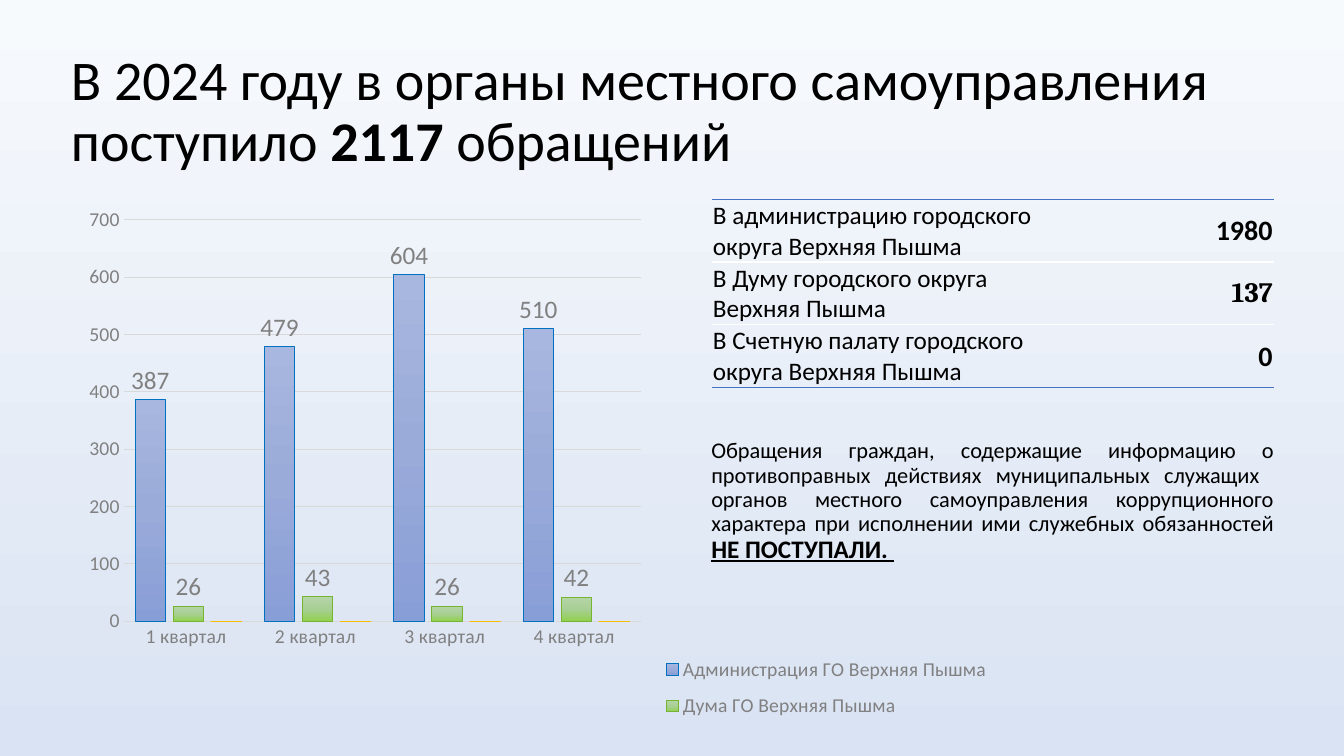
from copy import deepcopy

from pptx import Presentation
from pptx.chart.data import CategoryChartData
from pptx.dml.color import RGBColor
from pptx.enum.chart import XL_CHART_TYPE, XL_LABEL_POSITION, XL_LEGEND_POSITION, XL_TICK_MARK
from pptx.enum.text import MSO_ANCHOR, MSO_AUTO_SIZE, PP_ALIGN
from pptx.oxml import parse_xml
from pptx.oxml.ns import nsdecls, qn
from pptx.util import Pt

PX = 9525  # EMU in one px, 96 px to the inch
BLACK = RGBColor(0x00, 0x00, 0x00)
GREY = RGBColor(0x80, 0x80, 0x80)
LIGHT_GREY = RGBColor(0xD9, 0xD9, 0xD9)
WHITE = RGBColor(0xFF, 0xFF, 0xFF)
BLUE = RGBColor(0x44, 0x72, 0xC4)
BACKGROUND = [RGBColor(0xF7, 0xFA, 0xFD), RGBColor(0xDA, 0xE3, 0xF3)]
BLUE_BARS = [RGBColor(0xA8, 0xB7, 0xDF), RGBColor(0x9A, 0xAB, 0xD9), RGBColor(0x88, 0x9E, 0xD7)]
BLUE_EDGE = RGBColor(0x00, 0x70, 0xC0)
GREEN_BARS = [RGBColor(0xB5, 0xD5, 0xA7), RGBColor(0xA8, 0xCF, 0x96), RGBColor(0x92, 0xD0, 0x50)]
GREEN_EDGE = RGBColor(0x76, 0xB5, 0x31)
YELLOW_BARS = [RGBColor(0xFF, 0xDB, 0x9E), RGBColor(0xFF, 0xD5, 0x90), RGBColor(0xFF, 0xD0, 0x7C)]
YELLOW_EDGE = RGBColor(0xF9, 0xBC, 0x00)


def fill_downwards(fill, owner, colors):
    """Fill with evenly spaced colours running from top to bottom."""
    fill.gradient()
    fill.gradient_angle = 270
    stop_list = owner.find(".//" + qn("a:gsLst"))
    while len(stop_list) < len(colors):
        stop_list.insert(1, deepcopy(stop_list[0]))
    for number, (stop, color) in enumerate(zip(fill.gradient_stops, colors)):
        stop.position = number / (len(colors) - 1)
        stop.color.rgb = color


def add_run(paragraph, text, size, bold=False, name="Calibri", underline=None):
    run = paragraph.add_run()
    run.text = text
    run.font.size = Pt(size)
    run.font.bold = bold
    run.font.name = name
    run.font.underline = underline
    run.font.color.rgb = BLACK


presentation = Presentation()
presentation.slide_width = 1280 * PX
presentation.slide_height = 720 * PX
slide = presentation.slides.add_slide(presentation.slide_layouts[5])
fill_downwards(slide.background.fill, slide.element, BACKGROUND)

# Title
title = slide.shapes.title
title.left, title.top, title.width, title.height = 58 * PX, 38 * PX, 1157 * PX, 139 * PX
title.text_frame.vertical_anchor = MSO_ANCHOR.MIDDLE
title.text_frame.word_wrap = True
title.text_frame.auto_size = MSO_AUTO_SIZE.NONE
paragraph = title.text_frame.paragraphs[0]
paragraph.alignment = PP_ALIGN.LEFT
paragraph.line_spacing = 0.9
add_run(paragraph, "В 2024 году в органы местного самоуправления поступило ", 40)
add_run(paragraph, "2117", 40, bold=True)
add_run(paragraph, " обращений", 40)

# Chart of appeals by quarter
chart_data = CategoryChartData()
chart_data.categories = [f"{quarter} квартал " for quarter in range(1, 5)]
chart_data.add_series("Администрация ГО Верхняя Пышма", (387, 479, 604, 510))
chart_data.add_series("Дума ГО Верхняя Пышма", (26, 43, 26, 42))
chart_data.add_series("Series 3", (0, 0, 0, 0))
chart = slide.shapes.add_chart(
    XL_CHART_TYPE.COLUMN_CLUSTERED, 58 * PX, 190 * PX, 906 * PX, 511 * PX, chart_data
).chart
chart.has_title = False
chart.font.name = "Calibri"
chart.font.size = Pt(14)
chart.font.color.rgb = GREY
plot = chart.plots[0]
plot.gap_width = 75
plot.overlap = -25
plot.vary_by_categories = False

bar_styles = [(BLUE_BARS, BLUE_EDGE), (GREEN_BARS, GREEN_EDGE), (YELLOW_BARS, YELLOW_EDGE)]
for series, (colors, edge) in zip(plot.series, bar_styles):
    fill_downwards(series.format.fill, series.format.fill and series._element, colors)
    series.format.line.color.rgb = edge
    series.format.line.width = Pt(0.75)
for series in list(plot.series)[:2]:
    labels = series.data_labels
    labels.show_value = True
    labels.position = XL_LABEL_POSITION.OUTSIDE_END
    labels.font.name = "Calibri"
    labels.font.size = Pt(18)
    labels.font.color.rgb = GREY

# Axes
value_axis, category_axis = chart.value_axis, chart.category_axis
for axis in (value_axis, category_axis):
    axis.major_tick_mark = XL_TICK_MARK.NONE
    axis.minor_tick_mark = XL_TICK_MARK.NONE
value_axis.minimum_scale = 0
value_axis.maximum_scale = 700
value_axis.major_unit = 100
value_axis.format.line.fill.background()
for line in (value_axis.major_gridlines.format.line, category_axis.format.line):
    line.color.rgb = LIGHT_GREY
    line.width = Pt(0.75)

# Legend without the empty third series, and the places of plot and legend
chart.has_legend = True
legend = chart.legend
legend.position = XL_LEGEND_POSITION.BOTTOM
legend.include_in_layout = False
legend_element = legend._element
plot_element = chart._chartSpace.find(".//" + qn("c:plotArea"))
layouts = [
    (plot_element, 0, '<c:layoutTarget val="inner"/>', (0.066, 0.038, 0.544, 0.748)),
    (legend_element, 1, "", (0.62, 0.83, 0.37, 0.16)),
]
for element, index, target, (x, y, width, height) in layouts:
    for old_layout in element.findall(qn("c:layout")):
        element.remove(old_layout)
    element.insert(index, parse_xml(
        f'<c:layout {nsdecls("c")}><c:manualLayout>{target}'
        '<c:xMode val="edge"/><c:yMode val="edge"/>'
        f'<c:x val="{x}"/><c:y val="{y}"/><c:w val="{width}"/><c:h val="{height}"/>'
        "</c:manualLayout></c:layout>"))
legend_element.insert(1, parse_xml(
    f'<c:legendEntry {nsdecls("c")}><c:idx val="2"/><c:delete val="1"/></c:legendEntry>'))

# Table of appeals by authority
appeals = [
    ("В администрацию городского округа Верхняя Пышма", "1980", "Calibri"),
    ("В Думу городского округа Верхняя Пышма", "137", "Cambria"),
    ("В Счетную палату городского округа Верхняя Пышма", "0", "Calibri"),
]
table = slide.shapes.add_table(3, 2, 678 * PX, 190 * PX, 535 * PX, 177 * PX).table
table.first_row = False
table.horz_banding = False
table._tbl.tblPr.find(qn("a:tableStyleId")).text = "{2D5ABB26-0587-4C30-8999-92F81FD0307C}"
table.columns[0].width = 347 * PX
table.columns[1].width = 188 * PX
for row, (authority, count, count_font) in enumerate(appeals):
    add_run(table.cell(row, 0).text_frame.paragraphs[0], authority, 18)
    count_paragraph = table.cell(row, 1).text_frame.paragraphs[0]
    count_paragraph.alignment = PP_ALIGN.RIGHT
    add_run(count_paragraph, count, 20, bold=True, name=count_font)
    top_color = BLUE if row == 0 else WHITE
    bottom_color = BLUE if row == 2 else WHITE
    for cell in table.rows[row].cells:
        cell.vertical_anchor = MSO_ANCHOR.MIDDLE
        cell.margin_left = cell.margin_right = cell.margin_top = 1 * PX
        cell.margin_bottom = 0
        cell.fill.background()
        properties = cell._tc.get_or_add_tcPr()
        for index, (side, color) in enumerate((("lnT", top_color), ("lnB", bottom_color))):
            properties.insert(index, parse_xml(
                f'<a:{side} {nsdecls("a")} w="12700"><a:solidFill>'
                f'<a:srgbClr val="{color}"/></a:solidFill></a:{side}>'))

# Note on corruption reports
note = slide.shapes.add_textbox(668 * PX, 414 * PX, 555 * PX, 138 * PX)
note.text_frame.word_wrap = True
paragraph = note.text_frame.paragraphs[0]
paragraph.alignment = PP_ALIGN.JUSTIFY
paragraph.line_spacing = 0.9
paragraph.space_before = Pt(10)
add_run(paragraph, "Обращения граждан, содержащие информацию о противоправных действиях "
        "муниципальных служащих  органов местного самоуправления коррупционного характера "
        "при исполнении ими служебных обязанностей ", 16)
add_run(paragraph, "НЕ ПОСТУПАЛИ. ", 18, bold=True, underline=True)

presentation.save("out.pptx")
